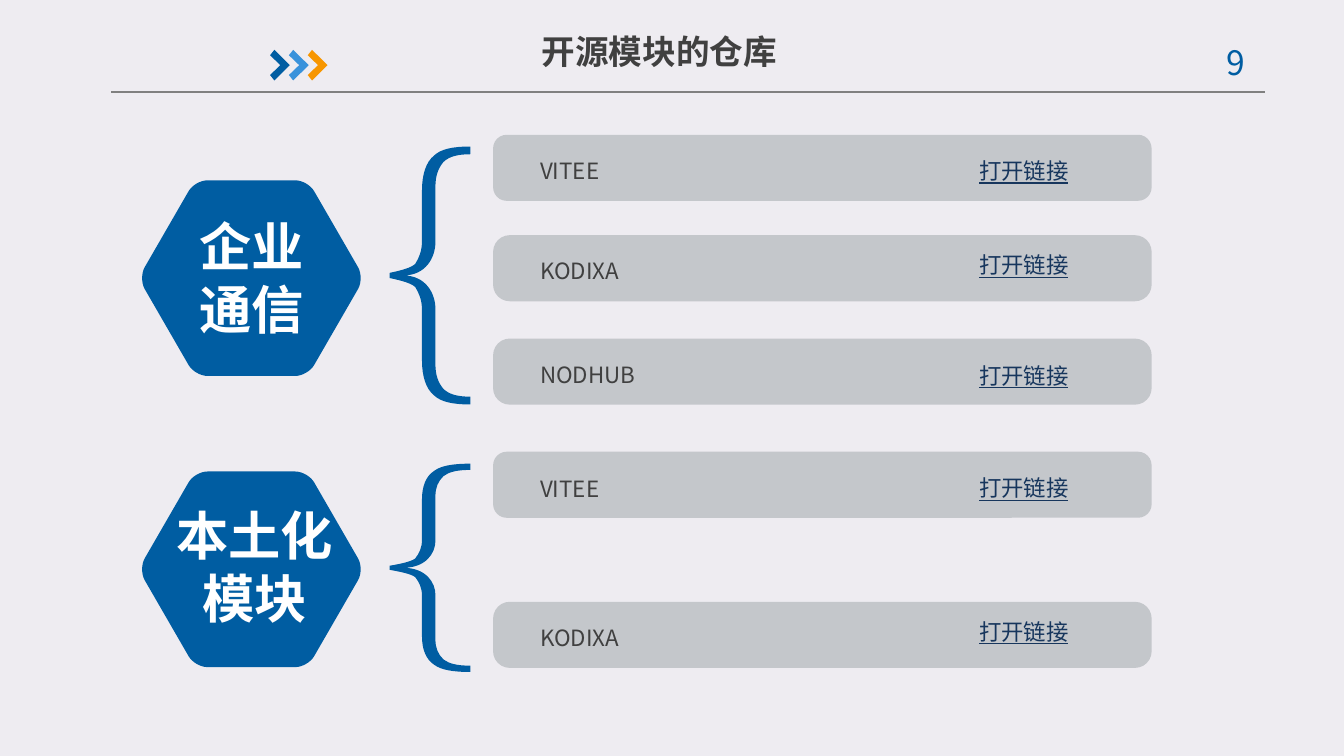
import math

import pptx
import pptx.dml.color
import pptx.enum.shapes
import pptx.enum.text
import pptx.util
from lxml import etree
from pptx.oxml.ns import qn

Pt = pptx.util.Pt
ALIGN = pptx.enum.text.PP_ALIGN
ANCHOR = pptx.enum.text.MSO_ANCHOR

FONT = "Noto Sans CJK SC"
COLORS = {
    "background": "EEECF1",
    "blue": "005DA2",
    "sky": "3992DB",
    "orange": "F79600",
    "bar": "C4C7CB",
    "rule": "808080",
    "text": "404040",
    "link": "17365D",
    "white": "FFFFFF",
}

GROUPS = [
    {
        "label": "企业通信", "label_box": (99, 115, 71.3, 67.7),
        "hexagon_y": 149, "brace": (78.5, 138.2),
        "rows": [("VITEE", 72.2, 81.2, 81.4, 0.206),
                 ("KODIXA", 126, 135, 131.8, 0.253),
                 ("NODHUB", 181.4, 190.4, 191, 0.253)],
    },
    {
        "label": "本土化模块", "label_box": (93.3, 269.7, 86.4, 67.7),
        "hexagon_y": 305, "brace": (248.4, 111.6),
        "rows": [("VITEE", 242, 251.9, 251.3, 0.206),
                 ("KODIXA", 322.4, 331.4, 328.1, 0.253)],
    },
]

BRACE_LEFT = 208.8
BRACE_START = (0, 0.02)
BRACE_HALF = [
    [(6.5, 0.04), (11.5, 0.06), (13.7, 0.09)],
    [(15.8, 0.14), (17.3, 0.19), (17.3, 0.27)],
    [(17.3, 0.66)],
    [(17.3, 0.78), (19.4, 0.88), (23.8, 0.93)],
    [(27.4, 0.98), (33.8, 1), (43.2, 1)],
    [(43.2, 0.94)],
    [(36, 0.94), (31.7, 0.92), (28.8, 0.88)],
    [(25.9, 0.83), (24.5, 0.77), (24.5, 0.69)],
    [(24.5, 0.26)],
    [(24.5, 0.14), (19.4, 0), (7.2, 0)],
]


def rgb(name):
    return pptx.dml.color.RGBColor.from_string(COLORS[name])


def between(a, b, t):
    return a[0] + (b[0] - a[0]) * t, a[1] + (b[1] - a[1]) * t


def paint(sp, color):
    sp.shadow.inherit = False
    sp.fill.solid()
    sp.fill.fore_color.rgb = rgb(color)
    sp.line.fill.background()


def add_outline(s, points, sizes, color):
    points = [(Pt(x), Pt(y)) for x, y in points]
    builder = s.shapes.build_freeform(*points[0])
    builder.add_line_segments(points[1:], close=True)
    sp = builder.convert_to_shape()
    steps = iter(list(sp._element.iter(qn("a:lnTo"))))
    for size in sizes:
        step = next(steps)
        if size == 3:
            step.tag = qn("a:cubicBezTo")
            for extra in (next(steps), next(steps)):
                step.append(extra[0])
                extra.getparent().remove(extra)
    paint(sp, color)


def write(sp, text, size=12, color="text", bold=False, underline=False,
          align=ALIGN.JUSTIFY, anchor=ANCHOR.TOP, spacing=None, margins=(0, 0)):
    tf = sp.text_frame
    tf.word_wrap = True
    tf.auto_size = pptx.enum.text.MSO_AUTO_SIZE.NONE
    tf.vertical_anchor = anchor
    tf.margin_left = tf.margin_right = Pt(margins[0])
    tf.margin_top = tf.margin_bottom = Pt(margins[1])
    p = tf.paragraphs[0]
    p.alignment = align
    p.line_spacing = spacing
    r = p.add_run()
    r.text = text
    r.font.size = Pt(size)
    r.font.bold = bold
    r.font.underline = underline
    r.font.color.rgb = rgb(color)
    r.font.name = FONT
    etree.SubElement(r.font._element, qn("a:ea")).set("typeface", FONT)


def add_text(s, box, text, **fmt):
    write(s.shapes.add_textbox(*map(Pt, box)), text, **fmt)


def add_title(s, text):
    sp = s.shapes.title
    sp.left, sp.top, sp.width, sp.height = map(Pt, (269.3, 12.2, 167.8, 30.2))
    write(sp, text, size=18, bold=True, align=ALIGN.CENTER,
          anchor=ANCHOR.MIDDLE, spacing=1.0, margins=(0, 3.6))


def add_header(s):
    line = s.shapes.add_connector(pptx.enum.shapes.MSO_CONNECTOR.STRAIGHT,
                                  Pt(59.5), Pt(49.3), Pt(677.5), Pt(49.3))
    line.line.color.rgb = rgb("rule")
    line.line.width = Pt(0.75)
    etree.SubElement(line._element.spPr, qn("a:effectLst"))
    chevron = [(0, 2.9), (2.3, 0), (10.6, 8.2), (2.3, 16.4), (0, 13.5), (5.5, 8.2)]
    for i, color in enumerate(("blue", "sky", "orange")):
        points = [(144.7 + 10.1 * i + x, 26.7 + y) for x, y in chevron]
        add_outline(s, points, [1] * 5, color)
    add_text(s, (637.9, 18.7, 52.6, 28.8), "9 ", size=18, color="blue",
             align=ALIGN.CENTER, margins=(7.2, 3.6))


def add_hexagon(s, cx, cy, radius=60.5, cut=6.7):
    corners = [(cx + radius * math.cos(math.radians(a)),
                cy + radius * math.sin(math.radians(a))) for a in range(0, 360, 60)]
    points = []
    for i, corner in enumerate(corners):
        start = between(corner, corners[i - 1], cut / radius)
        end = between(corner, corners[(i + 1) % 6], cut / radius)
        points += [start, between(start, corner, 0.55), between(end, corner, 0.55), end]
    add_outline(s, points, ([3, 1] * 6)[:-1], "blue")


def add_brace(s, top, height):
    half = height / 2
    upper = [BRACE_START] + [point for segment in BRACE_HALF for point in segment]
    lower = [(x, -y) for x, y in reversed(upper[:-1])]
    points = [(BRACE_LEFT + x, top + half - half * y) for x, y in upper + lower]
    sizes = [len(segment) for segment in BRACE_HALF]
    add_outline(s, points, sizes + sizes[::-1], "blue")


def add_row(s, name, top, name_top, link_top, corner):
    sp = s.shapes.add_shape(pptx.enum.shapes.MSO_SHAPE.ROUNDED_RECTANGLE,
                            Pt(264.2), Pt(top), Pt(352.8), Pt(35.4))
    sp.adjustments[0] = corner
    paint(sp, "bar")
    add_text(s, (289.4, name_top, 218.2, 16.6), name, spacing=1.2)
    add_text(s, (524.5, link_top, 79.2, 16.6), "打开链接", color="link",
             underline=True, spacing=1.2)


def main():
    prs = pptx.Presentation()
    prs.slide_width, prs.slide_height = Pt(720), Pt(405)
    s = prs.slides.add_slide(prs.slide_layouts[5])
    s.background.fill.solid()
    s.background.fill.fore_color.rgb = rgb("background")
    add_header(s)
    add_title(s, "开源模块的仓库")
    for group in GROUPS:
        add_hexagon(s, 134.7, group["hexagon_y"])
        add_text(s, group["label_box"], group["label"], size=28, color="white",
                 bold=True, align=ALIGN.CENTER)
        add_brace(s, *group["brace"])
        for row in group["rows"]:
            add_row(s, *row)
    prs.save("out.pptx")


if __name__ == "__main__":
    main()
